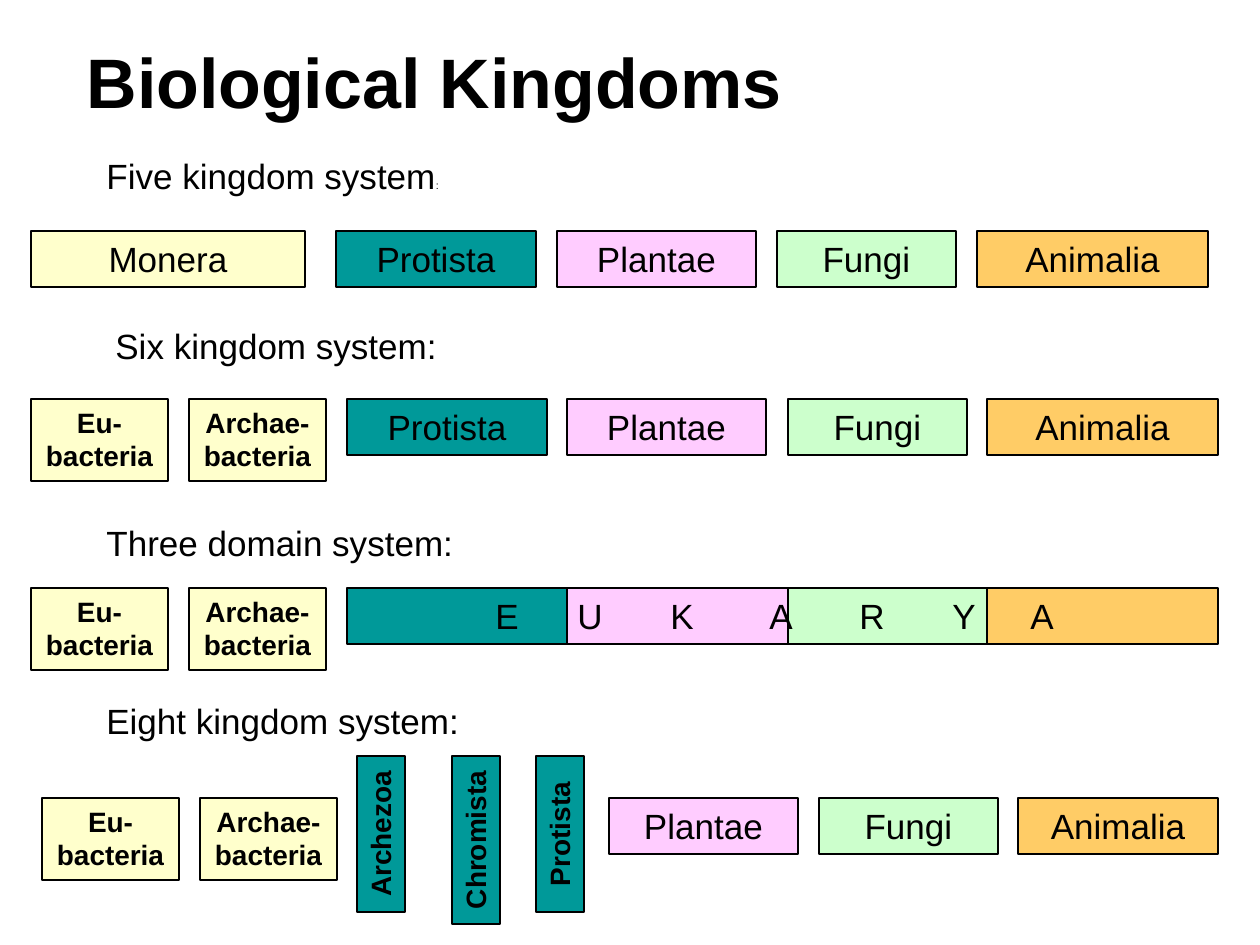
import pptx
import pptx.dml.color
import pptx.enum.shapes
import pptx.enum.text
import pptx.oxml
import pptx.oxml.ns
import pptx.util

RGB = pptx.dml.color.RGBColor
BLACK = RGB(0x00, 0x00, 0x00)
CREAM = RGB(0xFF, 0xFF, 0xCC)
TEAL = RGB(0x00, 0x99, 0x99)
PINK = RGB(0xFF, 0xCC, 0xFF)
GREEN = RGB(0xCC, 0xFF, 0xCC)
ORANGE = RGB(0xFF, 0xCC, 0x66)
ALIGN = pptx.enum.text.PP_ALIGN
ANCHOR = pptx.enum.text.MSO_ANCHOR
PX = 914400 / 126
BAR_H, BACTERIA_W, BACTERIA_H, UPRIGHT_W = 56, 137, 82, 48


def px(*lengths):
    return [pptx.util.Emu(round(n * PX)) for n in lengths]


class KingdomSlide:
    """Draws the elements of the kingdoms slide in one style."""

    font = "Arial"

    def __init__(self, prs):
        self.s = prs.slides.add_slide(prs.slide_layouts[5])

    def run(self, p, text, size=20, bold=False):
        r = p.add_run()
        r.text = text
        r.font.name = self.font
        r.font.size = pptx.util.Pt(size)
        r.font.bold = bold
        r.font.color.rgb = BLACK

    def frame(self, sp, wrap, anchor=ANCHOR.TOP):
        tf = sp.text_frame
        tf.word_wrap = wrap
        tf.auto_size = pptx.enum.text.MSO_AUTO_SIZE.SHAPE_TO_FIT_TEXT
        tf.vertical_anchor = anchor
        return tf

    def title(self, text, x, y, w, h):
        sp = self.s.shapes.title
        sp.left, sp.top, sp.width, sp.height = px(x, y, w, h)
        p = self.frame(sp, False).paragraphs[0]
        p.alignment = ALIGN.LEFT
        self.run(p, text, 40, True)

    def label(self, x, y, w, *runs):
        sp = self.s.shapes.add_textbox(*px(x, y, w, BAR_H))
        p = self.frame(sp, False).paragraphs[0]
        for text, size in runs:
            self.run(p, text, size)

    def box(self, x, y, w, h, fill, lines=(), size=20, bold=False):
        rect = pptx.enum.shapes.MSO_SHAPE.RECTANGLE
        sp = self.s.shapes.add_shape(rect, *px(x, y, w, h))
        sp.shadow.inherit = False
        sp.fill.solid()
        sp.fill.fore_color.rgb = fill
        sp.line.color.rgb = BLACK
        sp.line.width = pptx.util.Pt(0.75)
        if lines:
            tf = self.frame(sp, True)
            for i, text in enumerate(lines):
                p = tf.add_paragraph() if i else tf.paragraphs[0]
                p.alignment = ALIGN.CENTER
                self.run(p, text, size, bold)
        return sp

    def bars(self, y, *bars):
        for x, w, fill, name in bars:
            self.box(x, y, w, BAR_H, fill, [name] if name else ())

    def bacteria(self, x, y):
        self.box(x, y, BACTERIA_W, BACTERIA_H, CREAM, ["Eu-", "bacteria"], 16, True)
        self.box(x + 158, y, BACTERIA_W, BACTERIA_H, CREAM, ["Archae-bacteria"], 16, True)

    def upright(self, x, y, length, name):
        left, top = x - (length - UPRIGHT_W) / 2, y + (length - UPRIGHT_W) / 2
        sp = self.box(left, top, length, UPRIGHT_W, TEAL, [name], 16, True)
        sp.rotation = 270

    def spread(self, x, y, w, letters, stops):
        sp = self.s.shapes.add_textbox(*px(x, y, w, BAR_H))
        p = self.frame(sp, True).paragraphs[0]
        tabs = pptx.oxml.parse_xml("<a:tabLst %s/>" % pptx.oxml.ns.nsdecls("a"))
        for stop in px(*stops):
            tab = tabs.makeelement(pptx.oxml.ns.qn("a:tab"), {"pos": str(stop), "algn": "l"})
            tabs.append(tab)
        p._p.get_or_add_pPr().append(tabs)
        self.run(p, "\t".join(letters))


def main():
    prs = pptx.Presentation()
    prs.slide_width, prs.slide_height = px(1260, 945)
    k = KingdomSlide(prs)

    k.title("Biological Kingdoms", 74, 32, 728, 97)

    k.label(94, 148, 360, ("Five kingdom system", 20), (":", 6))
    k.bars(231, (31, 274, CREAM, "Monera"), (336, 200, TEAL, "Protista"),
           (557, 199, PINK, "Plantae"), (777, 179, GREEN, "Fungi"),
           (977, 231, ORANGE, "Animalia"))

    k.label(103, 318, 349, ("Six kingdom system:", 20))
    k.bacteria(31, 399)
    k.bars(399, (347, 200, TEAL, "Protista"), (567, 199, PINK, "Plantae"),
           (788, 179, GREEN, "Fungi"), (987, 231, ORANGE, "Animalia"))

    k.label(94, 515, 374, ("Three domain system:", 20))
    k.bacteria(31, 588)
    k.bars(588, (347, 220, TEAL, ""), (788, 199, GREEN, ""),
           (567, 221, PINK, ""), (987, 231, ORANGE, ""))
    k.spread(483, 588, 633, "EUKARYA", (82, 175, 274, 364, 457, 535))

    k.label(94, 693, 381, ("Eight kingdom system:", 20))
    k.bacteria(42, 798)
    for x, length, name in ((357, 156, "Archezoa"), (452, 168, "Chromista"),
                            (536, 156, "Protista")):
        k.upright(x, 756, length, name)
    k.bars(798, (609, 189, PINK, "Plantae"), (819, 179, GREEN, "Fungi"),
           (1018, 200, ORANGE, "Animalia"))

    prs.save("out.pptx")


if __name__ == "__main__":
    main()
